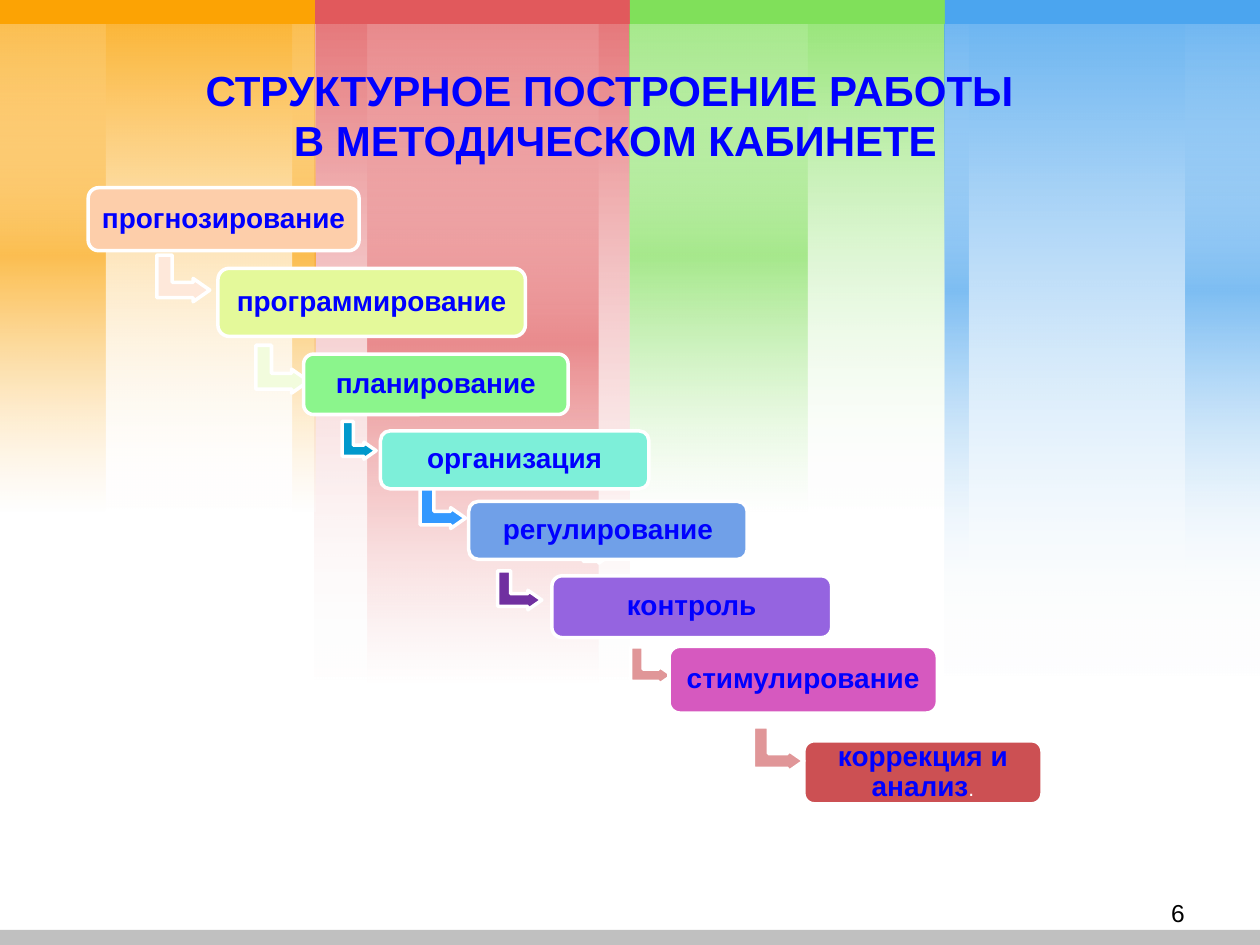
from lxml.etree import SubElement
from pptx import Presentation
from pptx.dml.color import RGBColor
from pptx.enum.shapes import MSO_SHAPE
from pptx.enum.text import MSO_ANCHOR, MSO_AUTO_SIZE, PP_ALIGN
from pptx.oxml.ns import qn
from pptx.util import Inches, Pt

WHITE = RGBColor(0xFF, 0xFF, 0xFF)
BLACK = RGBColor(0x00, 0x00, 0x00)
TEXT_BLUE = RGBColor(0x00, 0x00, 0xFF)
FOOTER_GRAY = RGBColor(0xC0, 0xC0, 0xC0)
ORANGE = RGBColor(0xFC, 0xA3, 0x04)
RED = RGBColor(0xE1, 0x59, 0x5C)
GREEN = RGBColor(0x80, 0xE0, 0x5A)
BLUE = RGBColor(0x4B, 0xA5, 0xEF)
PEACH = RGBColor(0xFD, 0xCE, 0xAA)
LIME = RGBColor(0xE4, 0xF9, 0x9A)
MINT = RGBColor(0x8B, 0xF5, 0x8C)
TURQUOISE = RGBColor(0x7D, 0xEF, 0xD9)
SKY = RGBColor(0x70, 0xA0, 0xE8)
VIOLET = RGBColor(0x95, 0x64, 0xE0)
PINK = RGBColor(0xD6, 0x59, 0xBF)
BRICK = RGBColor(0xCC, 0x50, 0x53)
PALE_PEACH = RGBColor(0xFE, 0xE8, 0xDA)
PALE_LIME = RGBColor(0xF2, 0xFC, 0xDD)
TEAL = RGBColor(0x00, 0x99, 0xCC)
AZURE = RGBColor(0x33, 0x99, 0xFF)
PALE_VIOLET = RGBColor(0xE7, 0xE4, 0xF8)
PURPLE = RGBColor(0x70, 0x30, 0xA0)
ROSE = RGBColor(0xE0, 0x96, 0x98)

COLUMN_WIDTH = 2.5
COLUMNS = [
    (1, RED, 5.43, 5.43, 30, [(0.42, 1.83)]),
    (2, GREEN, 4.06, 4.06, 30, [(0, 1.41)]),
    (3, BLUE, 5.4, 4.61, 0, [(0, 0.19), (1.91, 0.59)]),
    (0, ORANGE, 4.06, 4.06, 30, [(2.32, 0.18), (0, 0.84)]),
]
STEPS = [
    ("прогнозирование", PEACH, (0.7, 1.49, 2.15, 0.5), PALE_PEACH, (1.27, 2, 0.37, 0.42)),
    ("программирование", LIME, (1.73, 2.13, 2.44, 0.54), PALE_LIME, (2.05, 2.72, 0.38, 0.42)),
    ("планирование", MINT, (2.41, 2.81, 2.1, 0.48), TEAL, (2.7, 3.36, 0.3, 0.27)),
    ("организация", TURQUOISE, (3.02, 3.42, 2.13, 0.46), AZURE, (3.35, 3.85, 0.33, 0.36)),
    ("регулирование", SKY, (3.72, 3.98, 2.21, 0.46), PALE_VIOLET, (4.64, 4.3, 0.16, 0.18)),
    ("контроль", VIOLET, (4.38, 4.57, 2.22, 0.49), ROSE, (5.02, 5.12, 0.3, 0.33)),
    ("стимулирование", PINK, (5.31, 5.13, 2.13, 0.53), None, None),
    ("коррекция и анализ", BRICK, (6.38, 5.88, 1.89, 0.5), None, None),
]
FRONT_ARROWS = [
    (PURPLE, (3.97, 4.51, 0.31, 0.35)),
    (ROSE, (6, 5.75, 0.36, 0.4)),
]


def inches(box):
    return [Inches(length) for length in box]


def add_text(paragraph, text, size=16, color=TEXT_BLUE, bold=True, align=PP_ALIGN.CENTER):
    paragraph.alignment = align
    run = paragraph.add_run()
    run.text = text
    run.font.name = "Arial"
    run.font.size = Pt(size)
    run.font.bold = bold
    run.font.color.rgb = color


def add_block(slide, kind, box, fill=None, outlined=False):
    block = slide.shapes.add_shape(kind, *inches(box))
    block.shadow.inherit = False
    if fill is not None:
        block.fill.solid()
        block.fill.fore_color.rgb = fill
    if outlined:
        block.line.color.rgb = WHITE
        block.line.width = Pt(2)
    else:
        block.line.fill.background()
    return block


def add_fade(slide, box, stops):
    fade = add_block(slide, MSO_SHAPE.RECTANGLE, box)
    fade.fill.gradient()
    gradient = fade.element.spPr.find(qn("a:gradFill"))
    for child in list(gradient):
        gradient.remove(child)
    stop_list = SubElement(gradient, qn("a:gsLst"))
    for position, color, opacity in stops:
        stop = SubElement(stop_list, qn("a:gs"), pos=str(position * 1000))
        tone = SubElement(stop, qn("a:srgbClr"), val=str(color))
        SubElement(tone, qn("a:alpha"), val=str(opacity * 1000))
    SubElement(gradient, qn("a:lin"), ang="5400000", scaled="0")


def add_column(slide, box, color, stripe_height, edge_opacity, stripes):
    left, top = box[:2]
    add_fade(slide, box, [(0, color, 70), (100, WHITE, 0)])
    for offset, width in stripes:
        add_fade(slide, (left + offset, top, width, stripe_height),
                 [(0, WHITE, edge_opacity), (50, color, 70), (100, WHITE, edge_opacity)])
    add_fade(slide, box, [(0, color, 50), (100, WHITE, 0)])


def add_background(slide, box):
    left, top, width, height = box
    add_block(slide, MSO_SHAPE.RECTANGLE, (left, top + height - 0.12, width, 0.12), FOOTER_GRAY)
    for index, color, fade_height, *stripe_format in COLUMNS:
        column_box = (left + index * COLUMN_WIDTH, top, COLUMN_WIDTH, fade_height)
        add_column(slide, column_box, color, *stripe_format)
    for index, color, *_ in COLUMNS:
        add_block(slide, MSO_SHAPE.RECTANGLE,
                  (left + index * COLUMN_WIDTH, top, COLUMN_WIDTH, 0.19), color)


def add_title(slide, box):
    title = slide.shapes.title
    title.element.getparent().append(title.element)
    title.left, title.top, title.width, title.height = inches(box)
    frame = title.text_frame
    frame.vertical_anchor = MSO_ANCHOR.TOP
    frame.auto_size = MSO_AUTO_SIZE.SHAPE_TO_FIT_TEXT
    add_text(frame.paragraphs[0], "СТРУКТУРНОЕ ПОСТРОЕНИЕ РАБОТЫ ", size=24)
    add_text(frame.add_paragraph(), "В МЕТОДИЧЕСКОМ КАБИНЕТЕ", size=24)


def add_arrow(slide, box, color):
    arrow = add_block(slide, MSO_SHAPE.BENT_UP_ARROW, box, color, outlined=True)
    arrow.rotation = 90
    for index, value in enumerate((0.328, 0.25, 0.358)):
        arrow.adjustments[index] = value


def add_step(slide, box, label, color):
    step = add_block(slide, MSO_SHAPE.ROUNDED_RECTANGLE, box, color, outlined=True)
    frame = step.text_frame
    frame.word_wrap = True
    frame.vertical_anchor = MSO_ANCHOR.MIDDLE
    frame.margin_left = frame.margin_right = Inches(0.05)
    frame.margin_top = frame.margin_bottom = Inches(0.05)
    paragraph = frame.paragraphs[0]
    paragraph.line_spacing = 0.9
    add_text(paragraph, label)
    return paragraph


def add_staircase(slide):
    for label, color, box, arrow_color, arrow_box in STEPS:
        if arrow_box:
            add_arrow(slide, arrow_box, arrow_color)
        last_label = add_step(slide, box, label, color)
    add_text(last_label, ".", size=12, color=WHITE, bold=False)
    for color, box in FRONT_ARROWS:
        add_arrow(slide, box, color)


def add_page_number(slide, box):
    frame = slide.shapes.add_textbox(*inches(box)).text_frame
    frame.word_wrap = True
    add_text(frame.paragraphs[0], "6", size=14, color=BLACK, bold=False, align=PP_ALIGN.RIGHT)


def main():
    presentation = Presentation()
    presentation.slide_width = Inches(10)
    presentation.slide_height = Inches(7.5)
    slide = presentation.slides.add_slide(presentation.slide_layouts[5])
    add_background(slide, (0, 0, 10, 7.5))
    add_title(slide, (0.28, 0.46, 9.21, 0.91))
    add_staircase(slide)
    add_page_number(slide, (8.75, 7.08, 0.75, 0.27))
    presentation.save("out.pptx")


if __name__ == "__main__":
    main()
